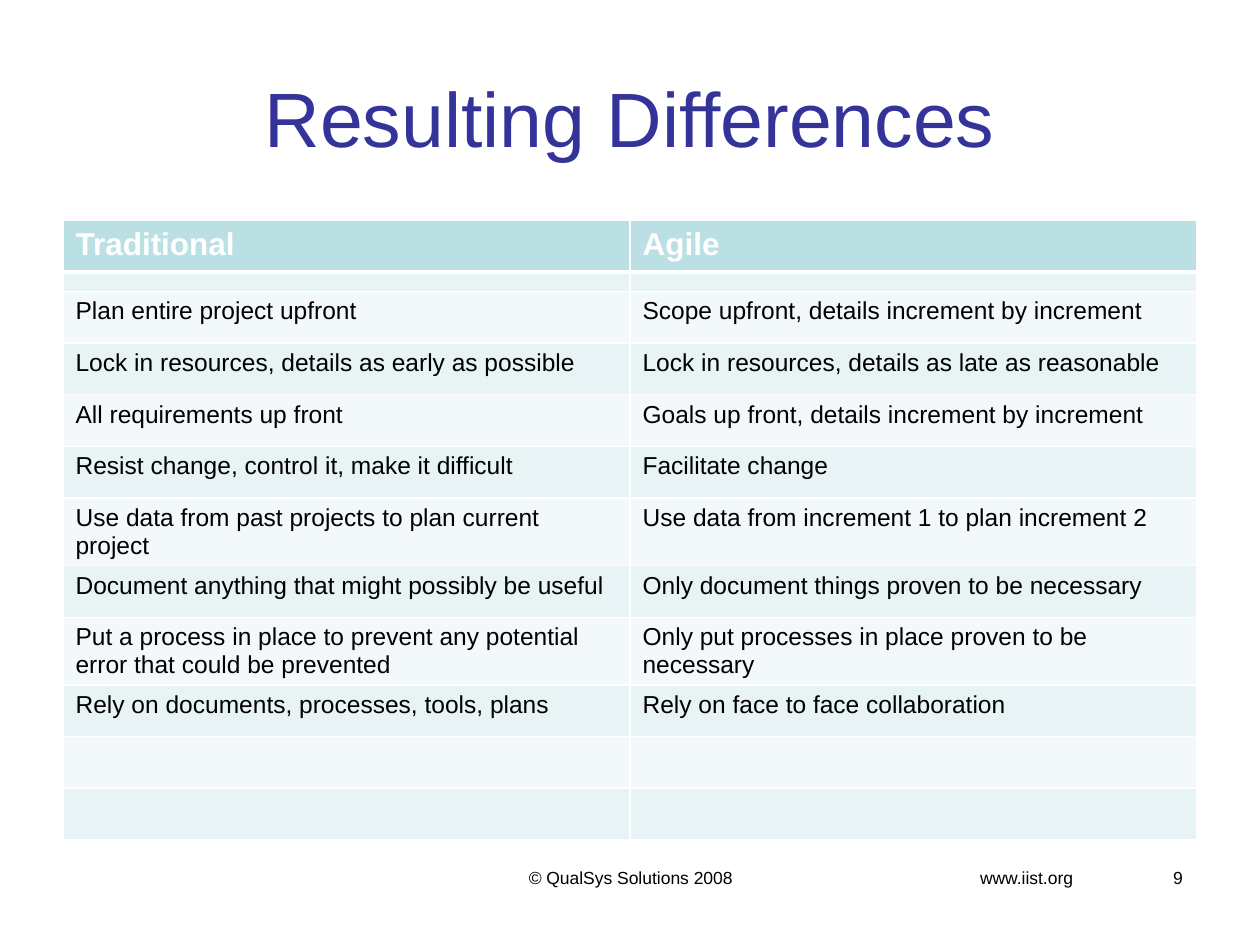
from lxml.etree import SubElement
from pptx import Presentation
from pptx.dml.color import RGBColor
from pptx.enum.text import MSO_ANCHOR, PP_ALIGN
from pptx.oxml.ns import qn
from pptx.util import Inches, Pt

COLORS = {"title": "333399", "text": "000000", "white": "FFFFFF",
          "header": "BBE0E3", "odd": "E7F3F4", "even": "F3F9FA"}
ROWS = [
    ("Traditional", "Agile"),
    ("", ""),
    ("Plan entire project upfront", "Scope upfront, details increment by increment"),
    ("Lock in resources, details as early as possible",
     "Lock in resources, details as late as reasonable"),
    ("All requirements up front", "Goals up front, details increment by increment"),
    ("Resist change, control it, make it difficult", "Facilitate change"),
    ("Use data from past projects to plan current project",
     "Use data from increment 1 to plan increment 2"),
    ("Document anything that might possibly be useful",
     "Only document things proven to be necessary"),
    ("Put a process in place to prevent any potential error that could be prevented",
     "Only put processes in place proven to be necessary"),
    ("Rely on documents, processes, tools, plans", "Rely on face to face collaboration"),
    ("", ""),
    ("", ""),
]
SPACER_ROW = 1


class SlideBuilder:
    """Holds the style and the current slide, and adds each kind of element."""

    def __init__(self, slide, font="Arial"):
        self.slide = slide
        self.font = font

    def add_run(self, paragraph, text, size, color, bold=False):
        run = paragraph.add_run()
        run.text = text
        run.font.name = self.font
        run.font.size = Pt(size)
        run.font.bold = bold
        run.font.color.rgb = RGBColor.from_string(COLORS[color])

    def add_title(self, text, left, top, width, height):
        title = self.slide.shapes.title
        title.left, title.top = Inches(left), Inches(top)
        title.width, title.height = Inches(width), Inches(height)
        title.text_frame.vertical_anchor = MSO_ANCHOR.MIDDLE
        paragraph = title.text_frame.paragraphs[0]
        paragraph.alignment = PP_ALIGN.CENTER
        self.add_run(paragraph, text, 44, "title")

    def add_footer(self, text, left, width, alignment, right_tab=None):
        box = self.slide.shapes.add_textbox(
            Inches(left), Inches(6.83), Inches(width), Inches(0.52))
        box.text_frame.word_wrap = True
        paragraph = box.text_frame.paragraphs[0]
        paragraph.alignment = alignment
        if right_tab:
            tabs = SubElement(paragraph._p.get_or_add_pPr(), qn("a:tabLst"))
            SubElement(tabs, qn("a:tab"), pos=str(Inches(right_tab)), algn="r")
        self.add_run(paragraph, text, 10, "text")

    def set_borders(self, cell, widths):
        properties = cell._tc.get_or_add_tcPr()
        for side, width in zip("LRTB", widths):
            line = SubElement(properties, qn(f"a:ln{side}"), w=str(Pt(width)))
            fill = SubElement(line, qn("a:solidFill"))
            SubElement(fill, qn("a:srgbClr"), val=COLORS["white"])

    def fill_cell(self, cell, text, row_index):
        header = row_index == 0
        color = "header" if header else "odd" if row_index % 2 else "even"
        self.set_borders(cell, (1, 1, 3 if row_index == 1 else 1, 3 if header else 1))
        cell.fill.solid()
        cell.fill.fore_color.rgb = RGBColor.from_string(COLORS[color])
        paragraph = cell.text_frame.paragraphs[0]
        if text:
            self.add_run(paragraph, text, 18 if header else 14,
                         "white" if header else "text", header)
        else:
            size = 3 if row_index == SPACER_ROW else 14
            SubElement(paragraph._p, qn("a:endParaRPr"), sz=str(size * 100))

    def add_table(self, rows, left, top, width, height):
        table = self.slide.shapes.add_table(
            len(rows), len(rows[0]), Inches(left), Inches(top),
            Inches(width), Inches(height)).table
        for row_index, texts in enumerate(rows):
            table.rows[row_index].height = Inches(0.15 if row_index == SPACER_ROW else 0.41)
            for column_index, text in enumerate(texts):
                self.fill_cell(table.cell(row_index, column_index), text, row_index)


def main():
    presentation = Presentation()
    presentation.slide_width, presentation.slide_height = Inches(10), Inches(7.5)
    slide = presentation.slides.add_slide(presentation.slide_layouts[5])
    builder = SlideBuilder(slide)
    builder.add_title("Resulting Differences", 0.5, 0.3, 9, 1.25)
    builder.add_table(ROWS, 0.5, 1.75, 9, 4.77)
    builder.add_footer("www.iist.org\t9", 7.68, 1.82, PP_ALIGN.LEFT, right_tab=1.61)
    builder.add_footer("© QualSys Solutions 2008", 3.42, 3.17, PP_ALIGN.CENTER)
    presentation.save("out.pptx")


if __name__ == "__main__":
    main()
